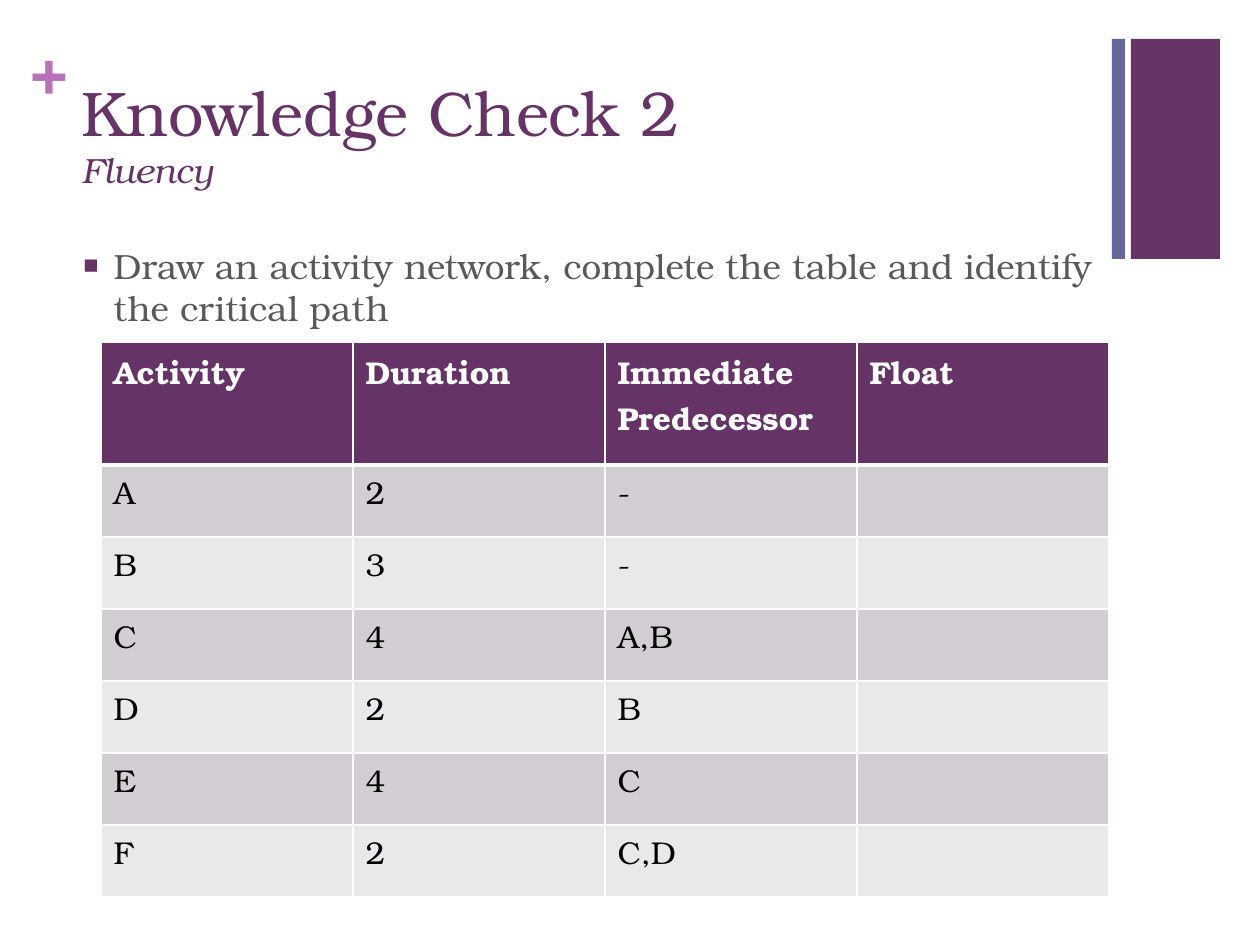
from lxml import etree
from pptx import Presentation
from pptx.dml.color import RGBColor
from pptx.enum import shapes, text
from pptx.oxml import ns
from pptx.util import Emu, Pt

PX_PER_INCH = 126
FONT = "TeX Gyre Bonum"
COLOURS = {
    "plum": "663366", "slate": "666699", "orchid": "B870B8",
    "grey": "595959", "black": "000000", "white": "FFFFFF",
    "dark_band": "D3CED3", "light_band": "EAE8EA",
}
HEADERS = ["Activity", "Duration", "Immediate Predecessor", "Float"]
ACTIVITIES = [
    ["A", "2", "-", ""],
    ["B", "3", "-", ""],
    ["C", "4", "A,B", ""],
    ["D", "2", "B", ""],
    ["E", "4", "C", ""],
    ["F", "2", "C,D", ""],
]


def px(length):
    return Emu(round(length * 914400 / PX_PER_INCH))


def colour(name):
    return RGBColor.from_string(COLOURS[name])


def add_span(para, words, size, colour_name, bold=False, italic=False):
    span = para.add_run()
    span.text = words
    span.font.name = FONT
    span.font.size = Pt(size)
    span.font.bold = bold
    span.font.italic = italic
    span.font.color.rgb = colour(colour_name)


def place(shape, box):
    shape.left, shape.top, shape.width, shape.height = map(px, box)


def prepare_frame(shape):
    frame = shape.text_frame
    frame.word_wrap = True
    frame.auto_size = text.MSO_AUTO_SIZE.NONE
    frame.vertical_anchor = text.MSO_ANCHOR.TOP
    para = frame.paragraphs[0]
    para.alignment = text.PP_ALIGN.LEFT
    return para


def add_corner_bars(page, box):
    left, top, width, height = box
    bars = [(0, 13, "slate"), (19, width - 19, "plum")]
    for offset, bar_width, fill in bars:
        bar = page.shapes.add_shape(shapes.MSO_SHAPE.RECTANGLE, *map(
            px, (left + offset, top, bar_width, height)))
        bar.shadow.inherit = False
        bar.fill.solid()
        bar.fill.fore_color.rgb = colour(fill)
        bar.line.fill.background()


def add_plus_sign(page, box):
    sign = page.shapes.add_textbox(*map(px, box))
    frame = sign.text_frame
    frame.margin_left = frame.margin_right = 0
    frame.margin_top = frame.margin_bottom = 0
    add_span(prepare_frame(sign), "+", 36, "orchid", bold=True)
    frame.word_wrap = False


def fill_title(page, box):
    title = page.shapes.title
    place(title, box)
    para = prepare_frame(title)
    add_span(para, "Knowledge Check 2", 36, "plum")
    para.add_line_break()
    add_span(para, "Fluency", 20, "plum", italic=True)


def fill_task(page, box):
    body = page.placeholders[1]
    place(body, box)
    para = prepare_frame(body)
    para.space_before = Pt(20)
    add_span(para, "Draw an activity network, complete the table "
             "and identify the critical path", 20, "grey")

    # Square bullet with a hanging indent
    properties = para._p.get_or_add_pPr()
    properties.set("marL", str(px(32)))
    properties.set("indent", str(px(-32)))
    bullet_colour = etree.SubElement(properties, ns.qn("a:buClr"))
    etree.SubElement(bullet_colour, ns.qn("a:srgbClr"), val=COLOURS["plum"])
    etree.SubElement(properties, ns.qn("a:buSzPct"), val="75000")
    etree.SubElement(properties, ns.qn("a:buFont"), typeface=FONT)
    etree.SubElement(properties, ns.qn("a:buChar"), char="■")


def set_borders(cell, top, bottom):
    properties = cell._tc.get_or_add_tcPr()
    widths = {"lnL": 1, "lnR": 1, "lnT": top, "lnB": bottom}
    for position, (side, width) in enumerate(widths.items()):
        line = etree.Element(ns.qn(f"a:{side}"), w=str(Pt(width)))
        fill = etree.SubElement(line, ns.qn("a:solidFill"))
        etree.SubElement(fill, ns.qn("a:srgbClr"), val=COLOURS["white"])
        properties.insert(position, line)


def add_activity_table(page, box, header_height):
    records = [HEADERS] + ACTIVITIES
    table = page.shapes.add_table(
        len(records), len(HEADERS), *map(px, box)).table
    for column in table.columns:
        column.width = px(box[2] // len(HEADERS))
    row_height = (box[3] - header_height) // len(ACTIVITIES)

    for number, record in enumerate(records):
        header = number == 0
        table.rows[number].height = px(header_height if header else row_height)
        band = "dark_band" if number % 2 else "light_band"
        for cell, words in zip(table.rows[number].cells, record):
            cell.fill.solid()
            cell.fill.fore_color.rgb = colour("plum" if header else band)
            set_borders(cell, top=3 if number == 1 else 1,
                        bottom=3 if header else 1)
            if words:
                add_span(cell.text_frame.paragraphs[0], words, 18,
                         "white" if header else "black", bold=header)


def main():
    deck = Presentation()
    deck.slide_width, deck.slide_height = px(1260), px(945)
    page = deck.slides.add_slide(deck.slide_layouts[1])

    # Decoration
    add_corner_bars(page, (1112, 39, 108, 220))
    add_plus_sign(page, (31, 31, 36, 77))

    # Content
    fill_title(page, (69, 67, 1041, 154))
    fill_task(page, (69, 238, 1041, 571))
    add_activity_table(page, (101, 342, 1008, 555), header_height=123)

    deck.save("out.pptx")


if __name__ == "__main__":
    main()
